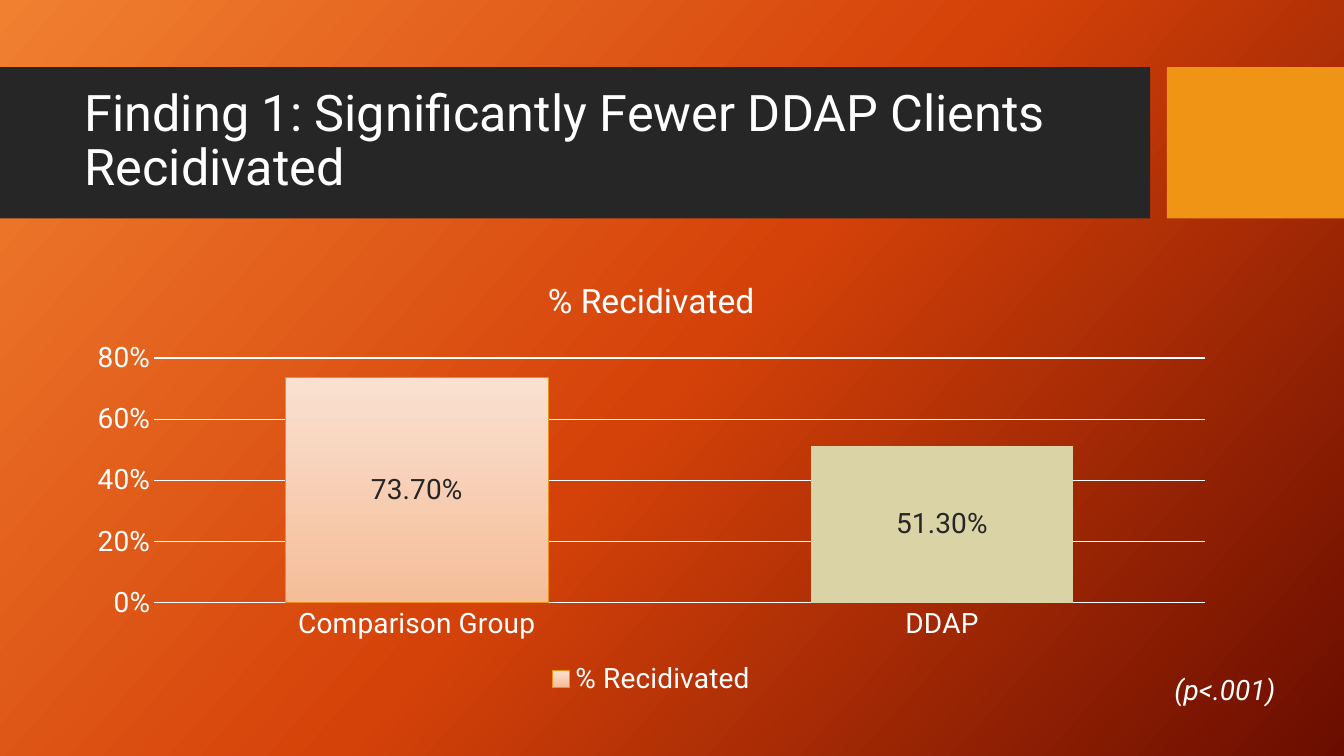
from copy import deepcopy

from pptx import Presentation
from pptx.chart.data import CategoryChartData
from pptx.dml.color import RGBColor
from pptx.enum.chart import XL_CHART_TYPE, XL_LABEL_POSITION, XL_LEGEND_POSITION, XL_TICK_MARK
from pptx.enum.shapes import MSO_SHAPE
from pptx.enum.text import MSO_ANCHOR, MSO_AUTO_SIZE, PP_ALIGN
from pptx.oxml.ns import qn
from pptx.util import Pt

COLUMNS = XL_CHART_TYPE.COLUMN_CLUSTERED
CENTER = XL_LABEL_POSITION.CENTER
BOTTOM = XL_LEGEND_POSITION.BOTTOM
NO_TICK = XL_TICK_MARK.NONE

HEADING = "Finding 1: Significantly Fewer DDAP Clients Recidivated"
MEASURE = "% Recidivated"
RATES = {"Comparison Group": 0.737, "DDAP": 0.513}
SIGNIFICANCE = "(p<.001)"

FONT = "Roboto"
COLORS = {
    "white": "FFFFFF", "dark": "262626", "accent": "F09415",
    "bg_start": "F18031", "bg_middle": "D54209", "bg_end": "6A0D00",
    "bar_top": "FAE1D1", "bar_bottom": "F5BD98", "bar_edge": "EB9115",
    "ddap": "DAD3A6",
}

SLIDE_W, SLIDE_H = 960, 540
BAND_TOP, BAND_H = 48, 108
BAND_W, ACCENT_LEFT = 821.5, 833.5
MARGIN = 53.3


def rgb(name):
    return RGBColor.from_string(COLORS[name])


def style(font, size, color="white"):
    font.name = FONT
    font.size = Pt(size)
    font.bold = False
    font.color.rgb = rgb(color)


def set_gradient(fill, start, end, clockwise_angle):
    fill.gradient()
    fill.gradient_angle = 360 - clockwise_angle
    for stop, color, position in zip(fill.gradient_stops, (start, end), (0, 1)):
        stop.color.rgb = rgb(color)
        stop.position = position


def set_line(line, color):
    line.color.rgb = rgb(color)
    line.width = Pt(0.75)


def add_background(slide):
    set_gradient(slide.background.fill, "bg_start", "bg_end", 42)
    first = slide.element.find(".//" + qn("a:gs"))
    middle = deepcopy(first)
    middle.set("pos", "50000")
    middle.find(qn("a:srgbClr")).set("val", COLORS["bg_middle"])
    first.addnext(middle)


def add_heading(slide):
    title = slide.shapes.title
    for left, width, color in ((0, BAND_W, "dark"),
                               (ACCENT_LEFT, SLIDE_W - ACCENT_LEFT, "accent")):
        band = slide.shapes.add_shape(MSO_SHAPE.RECTANGLE, Pt(left), Pt(BAND_TOP),
                                      Pt(width), Pt(BAND_H))
        band.shadow.inherit = False
        band.fill.solid()
        band.fill.fore_color.rgb = rgb(color)
        band.line.fill.background()
        title.element.addprevious(band.element)

    title.left, title.top = Pt(MARGIN), Pt(59)
    title.width, title.height = Pt(756.7), Pt(85)
    frame = title.text_frame
    frame.text = HEADING
    frame.word_wrap = True
    frame.auto_size = MSO_AUTO_SIZE.NONE
    frame.vertical_anchor = MSO_ANCHOR.MIDDLE
    paragraph = frame.paragraphs[0]
    paragraph.alignment = PP_ALIGN.LEFT
    paragraph.line_spacing = 0.9
    style(paragraph.runs[0].font, 36)


def add_rate_chart(slide):
    data = CategoryChartData(number_format="0.00%")
    data.categories = list(RATES)
    data.add_series(MEASURE, list(RATES.values()))
    chart = slide.shapes.add_chart(COLUMNS, Pt(MARGIN), Pt(184.3),
                                   Pt(823.7), Pt(316.8), data).chart
    style(chart.font, 20)

    chart.has_title = True
    heading = chart.chart_title
    heading.text_frame.text = MEASURE
    style(heading.text_frame.paragraphs[0].runs[0].font, 24)
    heading.include_in_layout = False

    chart.has_legend = True
    chart.legend.position = BOTTOM
    chart.legend.include_in_layout = False
    style(chart.legend.font, 20)

    for axis in (chart.category_axis, chart.value_axis):
        axis.major_tick_mark = axis.minor_tick_mark = NO_TICK
        style(axis.tick_labels.font, 20)
    set_line(chart.category_axis.format.line, "white")
    scale = chart.value_axis
    scale.minimum_scale, scale.maximum_scale, scale.major_unit = 0, 0.8, 0.2
    scale.format.line.fill.background()
    set_line(scale.major_gridlines.format.line, "white")
    scale.tick_labels.number_format = "0%"
    scale.tick_labels.number_format_is_linked = False

    plot = chart.plots[0]
    plot.gap_width, plot.overlap = 100, -24
    plot.vary_by_categories = False
    rates = plot.series[0]
    rates.invert_if_negative = False
    set_gradient(rates.format.fill, "bar_top", "bar_bottom", 90)
    set_line(rates.format.line, "bar_edge")
    ddap_fill = rates.points[1].format.fill
    ddap_fill.solid()
    ddap_fill.fore_color.rgb = rgb("ddap")

    labels = rates.data_labels
    labels.show_value = True
    labels.position = CENTER
    labels.number_format = "0.00%"
    labels.number_format_is_linked = False
    style(labels.font, 20, "dark")


def add_significance(slide):
    frame = slide.shapes.add_textbox(Pt(738.7), Pt(476.6), Pt(179.3), Pt(31.7)).text_frame
    frame.text = SIGNIFICANCE
    frame.word_wrap = True
    frame.auto_size = MSO_AUTO_SIZE.SHAPE_TO_FIT_TEXT
    paragraph = frame.paragraphs[0]
    paragraph.alignment = PP_ALIGN.RIGHT
    style(paragraph.runs[0].font, 20)
    paragraph.runs[0].font.italic = True


def main():
    deck = Presentation()
    deck.slide_width, deck.slide_height = Pt(SLIDE_W), Pt(SLIDE_H)
    slide = deck.slides.add_slide(deck.slide_layouts[5])
    add_background(slide)
    add_heading(slide)
    add_rate_chart(slide)
    add_significance(slide)
    deck.save("out.pptx")


if __name__ == "__main__":
    main()
